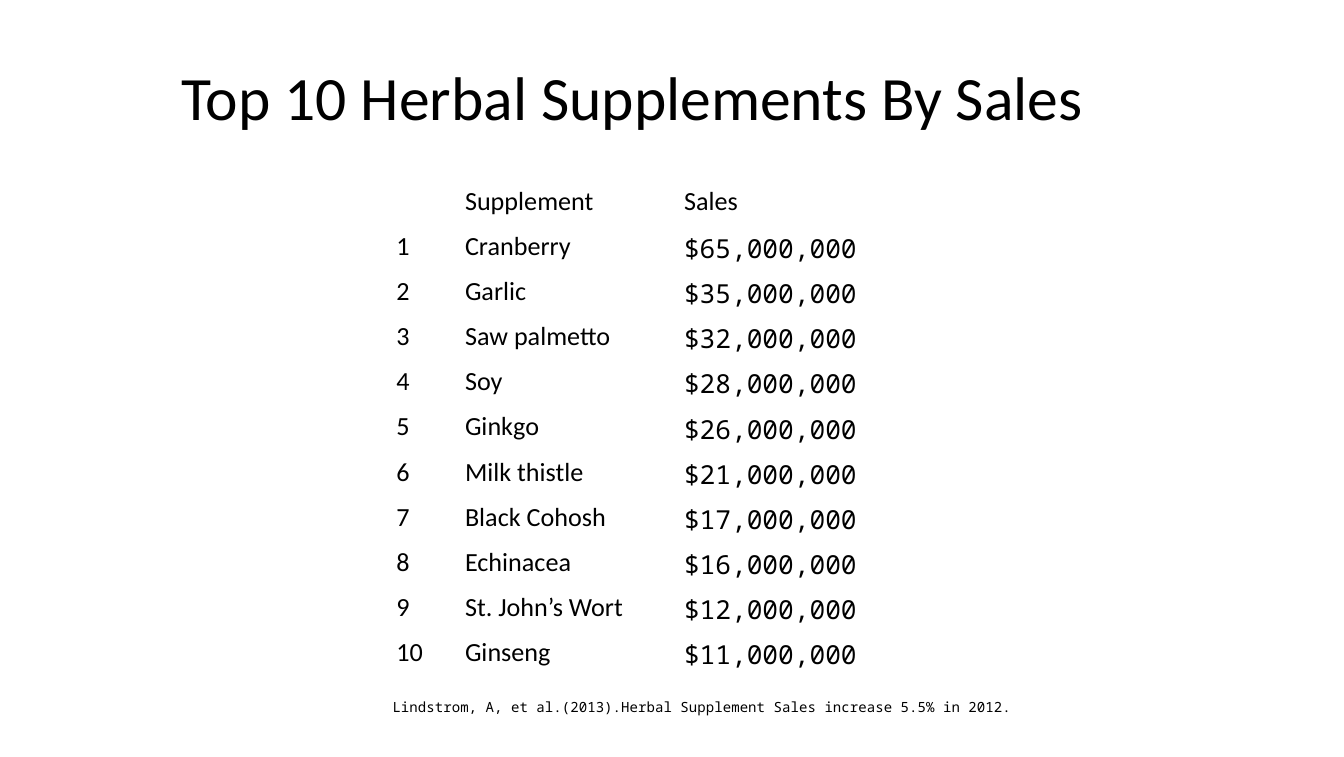
"""Build a slide ranking the ten best-selling herbal supplements."""
from pptx import Presentation
from pptx.dml.color import RGBColor
from pptx.enum.text import MSO_ANCHOR, PP_ALIGN
from pptx.util import Inches, Pt

TITLE = "Top 10 Herbal Supplements By Sales"
CITATION = "Lindstrom, A, et al.(2013).Herbal Supplement Sales increase 5.5% in 2012."
HEADER = ("", "Supplement", "Sales")
SALES = [
    ("Cranberry", "$65,000,000"),
    ("Garlic", "$35,000,000"),
    ("Saw palmetto", "$32,000,000"),
    ("Soy", "$28,000,000"),
    ("Ginkgo", "$26,000,000"),
    ("Milk thistle", "$21,000,000"),
    ("Black Cohosh", "$17,000,000"),
    ("Echinacea", "$16,000,000"),
    ("St. John’s Wort", "$12,000,000"),
    ("Ginseng", "$11,000,000"),
]
COLUMN_WIDTHS = (0.51, 1.63, 2.25)
TABLE_HEIGHT = 3.69
BLACK = RGBColor(0, 0, 0)
SANS = "Calibri"
MONO = "Noto Sans Mono"


def write(frame, text, size, font, align=PP_ALIGN.LEFT):
    frame.text = text
    para = frame.paragraphs[0]
    para.alignment = align
    para.font.size = Pt(size)
    para.font.name = font
    para.font.color.rgb = BLACK


def place(shape, left, top, width, height):
    shape.left, shape.top = Inches(left), Inches(top)
    shape.width, shape.height = Inches(width), Inches(height)


def add_sales_table(page):
    rows = [HEADER] + [(str(rank), *sale) for rank, sale in enumerate(SALES, 1)]
    table = page.shapes.add_table(
        len(rows), len(HEADER), Inches(2.87), Inches(1.34),
        Inches(sum(COLUMN_WIDTHS)), Inches(TABLE_HEIGHT)).table
    table.first_row = table.horz_banding = False
    for column, width in zip(table.columns, COLUMN_WIDTHS):
        column.width = Inches(width)
    for row_number, row in enumerate(rows):
        for column_number, text in enumerate(row):
            cell = table.cell(row_number, column_number)
            cell.fill.background()
            cell.margin_left = cell.margin_right = Inches(0.08)
            cell.margin_top, cell.margin_bottom = Inches(0.04), Inches(0.03)
            font = MONO if text.startswith("$") else SANS
            write(cell.text_frame, text, 14, font)


def main():
    deck = Presentation()
    deck.slide_width, deck.slide_height = Inches(10), Inches(5.63)
    page = deck.slides.add_slide(deck.slide_layouts[5])

    citation = page.shapes.add_textbox(
        Inches(2.37), Inches(4.69), Inches(5.7), Inches(0.68))
    citation.text_frame.word_wrap = True
    citation.text_frame.vertical_anchor = MSO_ANCHOR.BOTTOM
    write(citation.text_frame, CITATION, 7.5, MONO, PP_ALIGN.CENTER)

    title = page.shapes.title
    place(title, 1.25, 0.39, 7.51, 0.66)
    title.text_frame.vertical_anchor = MSO_ANCHOR.TOP
    write(title.text_frame, TITLE, 33, SANS)

    add_sales_table(page)
    deck.save("out.pptx")


if __name__ == "__main__":
    main()
